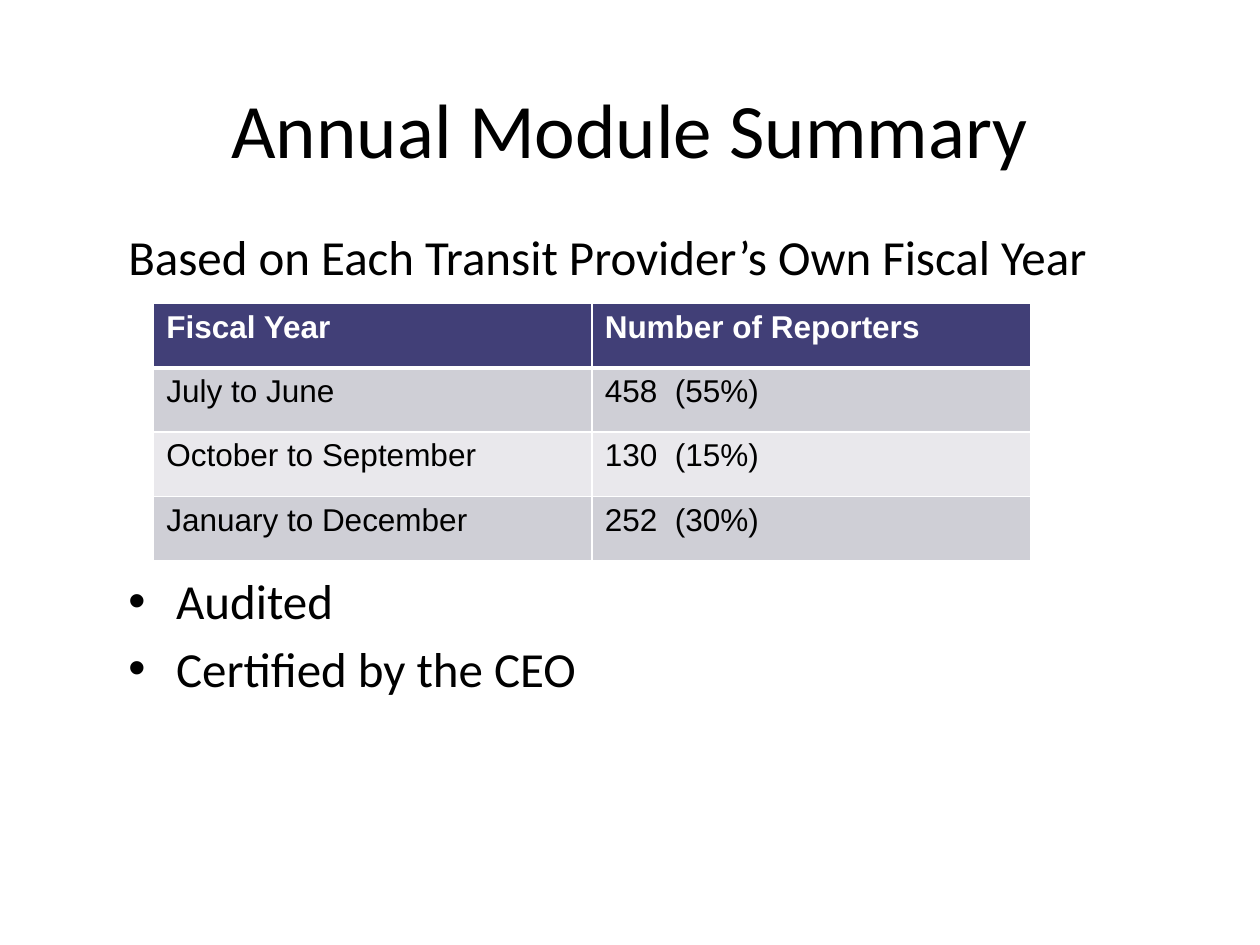
from lxml import etree
from pptx import Presentation
from pptx.dml.color import RGBColor
from pptx.enum.text import MSO_ANCHOR, PP_ALIGN
from pptx.oxml.ns import qn
from pptx.util import Inches, Pt

CENTER, LEFT = PP_ALIGN.CENTER, PP_ALIGN.LEFT
MIDDLE, TOP = MSO_ANCHOR.MIDDLE, MSO_ANCHOR.TOP

COLORS = {"text": "000000", "header": "413F77", "header_text": "FFFFFF",
          "odd_row": "CFCFD6", "even_row": "E9E8EC", "border": "FFFFFF"}

TITLE = "Annual Module Summary"
INTRO = "Based on Each Transit Provider’s Own Fiscal Year"
REPORTERS = [
    ("Fiscal Year", "Number of Reporters"),
    ("July to June", "458  (55%)"),
    ("October to September", "130  (15%)"),
    ("January to December", "252  (30%)"),
]
REQUIREMENTS = ["Audited", "Certified by the CEO"]

COLUMN_WIDTH, ROW_HEIGHT = 3.48, 0.51
BULLET_INDENT = 0.38


def add_run(paragraph, text, font_name, size, color, bold=False):
    run = paragraph.add_run()
    run.text = text
    run.font.name = font_name
    run.font.size = Pt(size)
    run.font.bold = bold
    run.font.color.rgb = RGBColor.from_string(COLORS[color])


def add_bullet(paragraph):
    properties = paragraph._p.get_or_add_pPr()
    properties.set("marL", str(Inches(BULLET_INDENT)))
    properties.set("indent", str(-Inches(BULLET_INDENT)))
    etree.SubElement(properties, qn("a:buFont"), typeface="Arial")
    etree.SubElement(properties, qn("a:buChar"), char="•")


def add_text(slide, lines, box, size, align=LEFT, anchor=TOP, bulleted=False):
    frame = slide.shapes.add_textbox(*map(Inches, box)).text_frame
    frame.word_wrap = True
    frame.vertical_anchor = anchor
    for index, line in enumerate(lines):
        paragraph = frame.add_paragraph() if index else frame.paragraphs[0]
        if bulleted:
            add_bullet(paragraph)
        paragraph.alignment = align
        if index:
            paragraph.space_before = Pt(5)
        add_run(paragraph, line, "Calibri", size, "text")


def set_borders(cell, bottom_width):
    properties = cell._tc.get_or_add_tcPr()
    widths = {"a:lnL": 1, "a:lnR": 1, "a:lnT": 1, "a:lnB": bottom_width}
    for position, (tag, width) in enumerate(widths.items()):
        line = etree.Element(qn(tag), w=str(Pt(width)))
        fill = etree.SubElement(line, qn("a:solidFill"))
        etree.SubElement(fill, qn("a:srgbClr"), val=COLORS["border"])
        properties.insert(position, line)


def add_reporter_table(slide, left, top):
    row_count, column_count = len(REPORTERS), len(REPORTERS[0])
    table = slide.shapes.add_table(
        row_count, column_count, Inches(left), Inches(top),
        Inches(COLUMN_WIDTH * column_count),
        Inches(ROW_HEIGHT * row_count)).table
    for row_index, values in enumerate(REPORTERS):
        is_header = row_index == 0
        band = "odd_row" if row_index % 2 else "even_row"
        for column_index, value in enumerate(values):
            cell = table.cell(row_index, column_index)
            cell.fill.solid()
            cell.fill.fore_color.rgb = RGBColor.from_string(
                COLORS["header" if is_header else band])
            # The rule under the header is heavier, seen from both rows.
            set_borders(cell, 3 if is_header else 1)
            if row_index == 1:
                cell._tc.tcPr.find(qn("a:lnT")).set("w", str(Pt(3)))
            add_run(cell.text_frame.paragraphs[0], value, "Arial", 18,
                    "header_text" if is_header else "text", is_header)


def main():
    presentation = Presentation()
    presentation.slide_width = Inches(10)
    presentation.slide_height = Inches(7.5)
    slide = presentation.slides.add_slide(presentation.slide_layouts[6])
    add_text(slide, [TITLE], (0.5, 0.48, 9, 1.07), 44, CENTER, MIDDLE)
    add_text(slide, [INTRO], (0.92, 1.75, 8.16, 0.6), 28)
    add_reporter_table(slide, 1.22, 2.41)
    add_text(slide, REQUIREMENTS, (0.92, 4.48, 8.16, 2.22), 28, bulleted=True)
    presentation.save("out.pptx")


if __name__ == "__main__":
    main()
